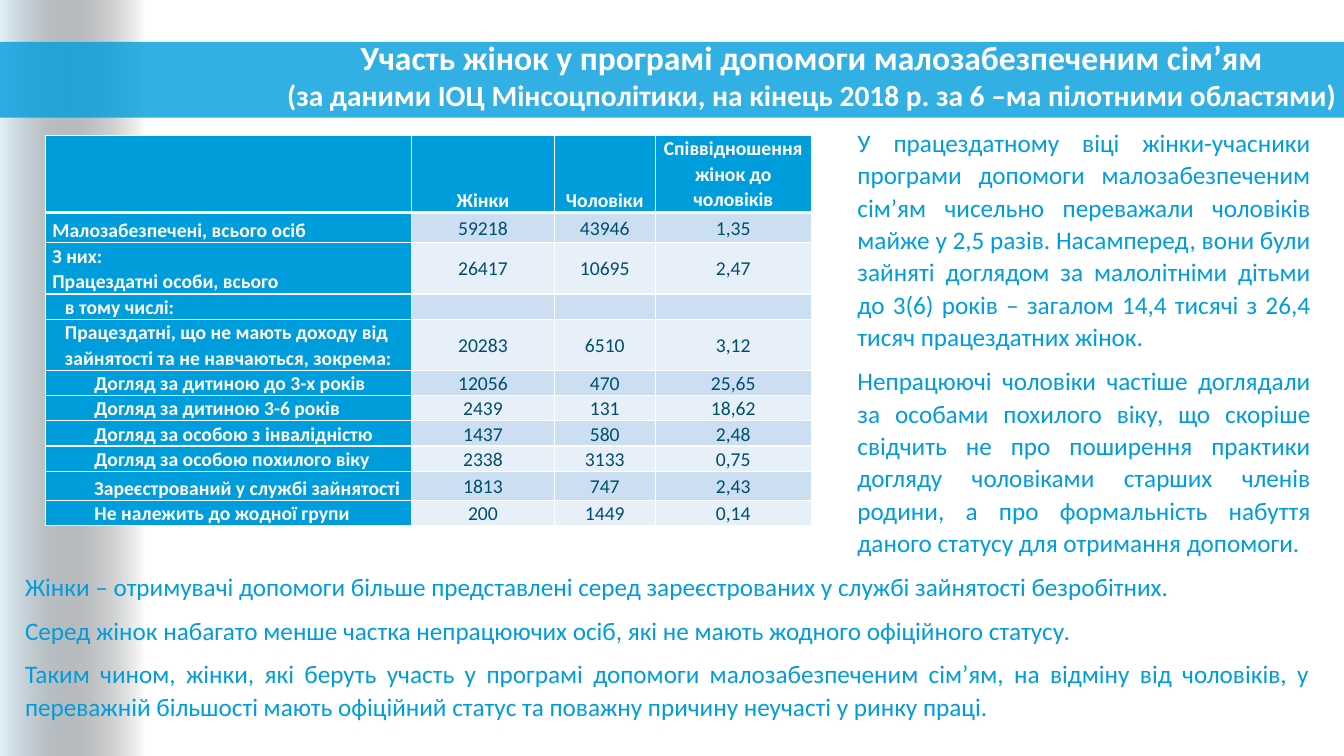
from dataclasses import dataclass
from itertools import cycle
from typing import Any

from lxml import etree
from pptx import Presentation
from pptx.dml.color import RGBColor
from pptx.enum.shapes import MSO_SHAPE
from pptx.enum.text import MSO_ANCHOR, PP_ALIGN
from pptx.oxml.ns import qn
from pptx.util import Inches, Pt

RECTANGLE = MSO_SHAPE.RECTANGLE
TOP, MIDDLE, BOTTOM = MSO_ANCHOR.TOP, MSO_ANCHOR.MIDDLE, MSO_ANCHOR.BOTTOM
LEFT, CENTER, JUSTIFY = PP_ALIGN.LEFT, PP_ALIGN.CENTER, PP_ALIGN.JUSTIFY
GRID_COLUMNS, GRID_ROWS = 160, 90


@dataclass(frozen=True)
class Theme:
    font: str = "Calibri"
    blue: str = "009DDC"
    pale: str = "E1F1FA"
    black: str = "000000"
    white: str = "FFFFFF"
    figure: str = "004E6E"
    stripes: tuple = ("CCDFF2", "E7EFF9")
    title: int = 24
    subtitle: int = 21
    body: int = 18
    table: int = 14
    thin: int = 1
    thick: int = 3
    leading: float = 1.07


def write_text(frame, text, *, font, sizes, color, bold=False, align=LEFT,
               anchor=TOP, leading=1.0, after=0, indent=0):
    frame.word_wrap = True
    frame.vertical_anchor = anchor
    for index, (line, size) in enumerate(zip(text.split("\n"), cycle(sizes))):
        para = frame.add_paragraph() if index else frame.paragraphs[0]
        para.alignment = align
        para.line_spacing = leading
        para.space_after = Pt(after)
        if indent:
            para._p.get_or_add_pPr().set("marL", str(indent))
        if not line:
            etree.SubElement(para._p, qn("a:endParaRPr"), sz=str(size * 100))
            continue
        span = para.add_run()
        span.text = line
        span.font.name = font
        span.font.size = Pt(size)
        span.font.bold = bold
        span.font.color.rgb = RGBColor.from_string(color)


@dataclass
class Canvas:
    theme: Theme
    page: Any
    width: int
    height: int

    def across(self, columns):
        return round(self.width * columns / GRID_COLUMNS)

    def down(self, rows):
        return round(self.height * rows / GRID_ROWS)

    def place(self, left, top, width, height):
        return self.across(left), self.down(top), self.across(width), self.down(height)

    def panel(self, area, colors, opacity):
        shape = self.page.shapes.add_shape(RECTANGLE, *self.place(*area))
        shape.shadow.inherit = False
        if len(colors) == 1:
            shape.fill.solid()
            targets = [shape.fill.fore_color]
        else:
            shape.fill.gradient()
            shape.fill.gradient_angle = 0
            targets = [stop.color for stop in shape.fill.gradient_stops]
        for target, color in zip(targets, colors):
            target.rgb = RGBColor.from_string(color)
        last_color = shape._element.spPr.findall(".//" + qn("a:srgbClr"))[-1]
        etree.SubElement(last_color, qn("a:alpha"), val=str(opacity * 1000))
        shape.line.fill.background()

    def text(self, area, text, **style):
        box = self.page.shapes.add_textbox(*self.place(*area))
        write_text(box.text_frame, text, font=self.theme.font, **style)

    def body(self, area, text):
        self.text(area, text, sizes=[self.theme.body], color=self.theme.blue,
                  align=JUSTIFY, leading=self.theme.leading, after=8)

    def borders(self, cell, top, bottom):
        thin = self.theme.thin
        edges = {"a:lnL": thin, "a:lnR": thin, "a:lnT": top, "a:lnB": bottom}
        for index, (tag, weight) in enumerate(edges.items()):
            line = etree.Element(qn(tag), w=str(Pt(weight)))
            paint = etree.SubElement(line, qn("a:solidFill"))
            etree.SubElement(paint, qn("a:srgbClr"), val=self.theme.white)
            cell._tc.get_or_add_tcPr().insert(index, line)

    def cell(self, cell, row, column, text, indent):
        theme = self.theme
        header, label = row == 0, column == 0
        accent = header or label
        cell.margin_left = cell.margin_right = Inches(0.07)
        cell.margin_top = cell.margin_bottom = 0
        cell.fill.solid()
        fill = theme.blue if accent else theme.stripes[(row - 1) % 2]
        cell.fill.fore_color.rgb = RGBColor.from_string(fill)
        if header and column == 3:
            anchor = TOP
        else:
            anchor = BOTTOM if accent else MIDDLE
        write_text(cell.text_frame, text, font=theme.font, sizes=[theme.table],
                   color=theme.white if accent else theme.figure, bold=accent,
                   align=LEFT if label else CENTER, leading=theme.leading,
                   indent=self.across(indent) if label else 0)
        cell.vertical_anchor = anchor
        self.borders(cell, theme.thick if row == 1 else theme.thin,
                     theme.thick if header else theme.thin)

    def table(self, left, top, widths, heights, records):
        area = self.place(left, top, sum(widths), sum(heights))
        table = self.page.shapes.add_table(len(heights), len(widths), *area).table
        table.first_row = table.horz_banding = False
        for column, width in zip(table.columns, widths):
            column.width = self.across(width)
        for row, height in zip(table.rows, heights):
            row.height = self.down(height)
        for row, (indent, *values) in enumerate(records):
            for column, value in enumerate(values):
                self.cell(table.cell(row, column), row, column, value, indent)


LABEL_INDENT, DETAIL_INDENT = 1.5, 5
RECIPIENTS = [
    (0, "", "Жінки", "Чоловіки", "Співвідношення жінок до чоловіків"),
    (0, "Малозабезпечені, всього осіб", "59218", "43946", "1,35"),
    (0, "З них:\nПрацездатні особи, всього", "26417", "10695", "2,47"),
    (LABEL_INDENT, "в тому числі:", "", "", ""),
    (LABEL_INDENT, "Працездатні, що не мають доходу від зайнятості та не навчаються, зокрема:",
     "20283", "6510", "3,12"),
    (DETAIL_INDENT, "Догляд за дитиною до 3-х років", "12056", "470", "25,65"),
    (DETAIL_INDENT, "Догляд за дитиною 3-6 років", "2439", "131", "18,62"),
    (DETAIL_INDENT, "Догляд за особою з інвалідністю", "1437", "580", "2,48"),
    (DETAIL_INDENT, "Догляд за особою похилого віку", "2338", "3133", "0,75"),
    (DETAIL_INDENT, "Зареєстрований у службі зайнятості", "1813", "747", "2,43"),
    (DETAIL_INDENT, "Не належить до жодної групи", "200", "1449", "0,14"),
]
COMMENTS = [
    ((100.9, 14.3, 56.3, 28.4),
     "У працездатному віці жінки-учасники програми допомоги малозабезпеченим сім’ям "
     "чисельно переважали чоловіків майже у 2,5 разів. Насамперед, вони були зайняті "
     "доглядом за малолітніми дітьми до 3(6) років – загалом 14,4 тисячі з 26,4 тисяч "
     "працездатних жінок."),
    ((100.9, 42.7, 56.3, 24.6),
     "Непрацюючі чоловіки частіше доглядали за особами похилого віку, що скоріше "
     "свідчить не про поширення практики догляду чоловіками старших членів родини, "
     "а про формальність набуття даного статусу для отримання допомоги."),
    ((1.8, 67.2, 155.3, 19.4),
     "Жінки – отримувачі допомоги більше представлені серед зареєстрованих у службі "
     "зайнятості безробітних.\n"
     "Серед жінок набагато менше частка непрацюючих осіб, які не мають жодного "
     "офіційного статусу.\n"
     "Таким чином, жінки, які беруть участь у програмі допомоги малозабезпеченим "
     "сім’ям, на відміну від чоловіків, у переважній більшості мають офіційний статус "
     "та поважну причину неучасті у ринку праці."),
]


def main():
    deck = Presentation()
    deck.slide_width, deck.slide_height = Inches(13.33), Inches(7.5)
    page = deck.slides.add_slide(deck.slide_layouts[6])
    theme = Theme()
    canvas = Canvas(theme, page, deck.slide_width, deck.slide_height)
    canvas.panel((0, 0, 17.3, GRID_ROWS), [theme.pale, theme.black], 0)
    for left, width in ((68, 92), (0, 68)):
        canvas.panel((left, 5, width, 9), [theme.blue], 80)
    canvas.text((28.2, 5, 136.9, 7.8),
                "Участь жінок у програмі допомоги малозабезпеченим сім’ям\n"
                "(за даними ІОЦ Мінсоцполітики, на кінець 2018 р. за 6 –ма пілотними областями)",
                sizes=[theme.title, theme.subtitle], color=theme.white, bold=True,
                align=CENTER, anchor=MIDDLE)
    canvas.table(5.4, 16.1, [43.6, 17, 12, 18.6],
                 [9.2, 3.6, 6.1, 3, 6.1, 3, 3, 3, 3, 3.5, 3], RECIPIENTS)
    for area, comment in COMMENTS:
        canvas.body(area, comment)
    deck.save("out.pptx")


if __name__ == "__main__":
    main()
